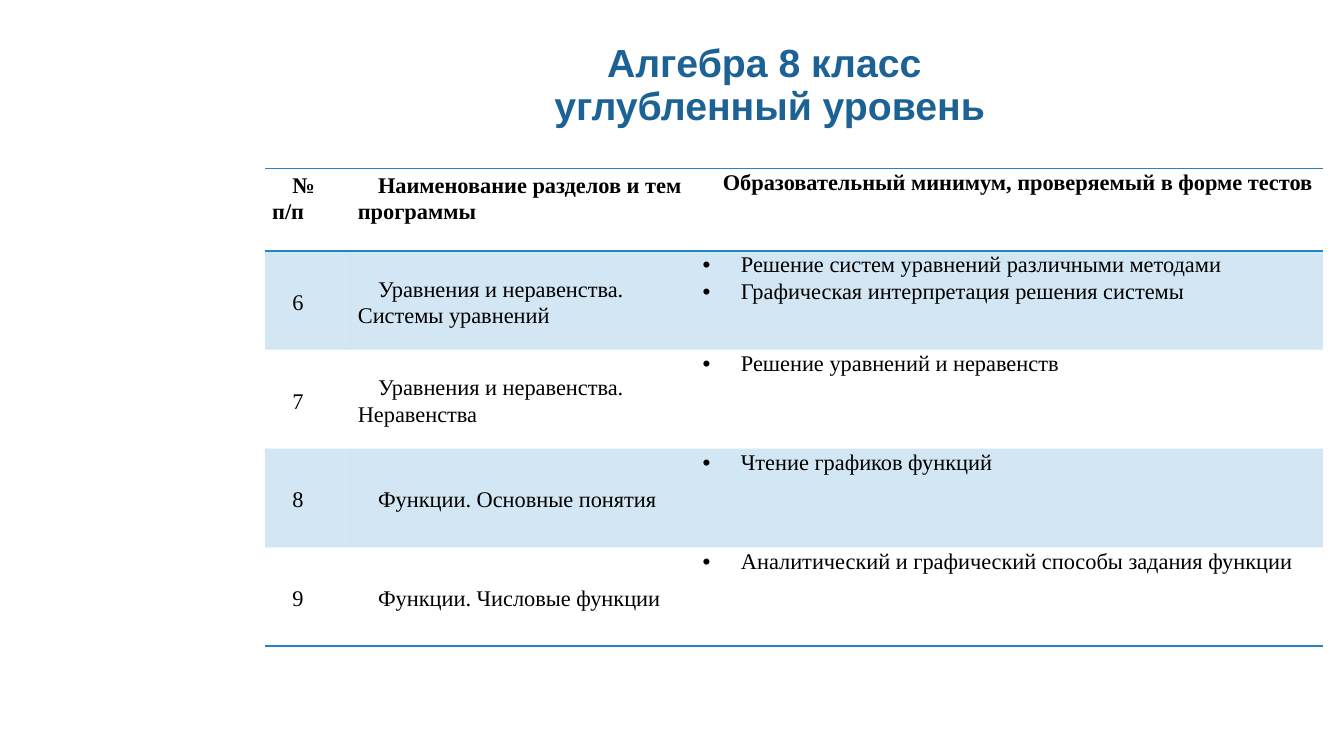
from dataclasses import dataclass

from lxml.etree import SubElement
from pptx import Presentation
from pptx.dml.color import RGBColor
from pptx.enum.text import MSO_ANCHOR as Anchor, PP_ALIGN as Align
from pptx.oxml.ns import qn
from pptx.table import _Cell as Cell
from pptx.text.text import _Paragraph as Paragraph
from pptx.util import Inches, Pt

COLORS = {"title": "1D6294", "accent": "2683C6", "text": "000000"}
NO_STYLE = "{2D5ABB26-0587-4C30-8999-92F81FD0307C}"
COLUMN_WIDTHS = (0.85, 3.42, 6.22)
HEADER_HEIGHT, TOPIC_HEIGHT = 0.82, 0.98
HEADINGS = (
    "№ п/п",
    "Наименование разделов и тем программы",
    "Образовательный минимум, проверяемый в форме тестов",
)


@dataclass(frozen=True)
class Topic:
    number: int
    name: str
    skills: tuple[str, ...]


TOPICS = (
    Topic(6, "Уравнения и неравенства. Системы уравнений",
          ("Решение систем уравнений различными методами",
           "Графическая интерпретация решения системы")),
    Topic(7, "Уравнения и неравенства. Неравенства",
          ("Решение уравнений и неравенств",)),
    Topic(8, "Функции. Основные понятия", ("Чтение графиков функций",)),
    Topic(9, "Функции. Числовые функции",
          ("Аналитический и графический способы задания функции",)),
)


def set_font(paragraph: Paragraph, name: str, size: int, color: str, bold: bool) -> None:
    for run in paragraph.runs:
        run.font.name = name
        run.font.size = Pt(size)
        run.font.bold = bold
        run.font.color.rgb = RGBColor.from_string(COLORS[color])


def set_indent(paragraph: Paragraph, left: float, first: float) -> None:
    properties = paragraph._p.get_or_add_pPr()
    properties.set("marL", str(Inches(left)))
    properties.set("indent", str(Inches(first)))


def add_bullet(paragraph: Paragraph) -> None:
    properties = paragraph._p.get_or_add_pPr()
    SubElement(properties, qn("a:buFont"), typeface="Arial")
    SubElement(properties, qn("a:buChar"), char="•")


def add_border(cell: Cell, side: str) -> None:
    """Rule one side of the cell: "T" for top, "B" for bottom."""
    line = SubElement(cell._tc.get_or_add_tcPr(), qn(f"a:ln{side}"), w=str(Pt(1)))
    fill = SubElement(line, qn("a:solidFill"))
    SubElement(fill, qn("a:srgbClr"), val=COLORS["accent"])


def shade(cell: Cell) -> None:
    """Tint the cell with the accent colour at 20 % opacity."""
    cell.fill.solid()
    cell.fill.fore_color.rgb = RGBColor.from_string(COLORS["accent"])
    color = cell._tc.tcPr.find(f"{qn('a:solidFill')}/{qn('a:srgbClr')}")
    SubElement(color, qn("a:alpha"), val="20000")


def fill_cell(cell: Cell, lines: tuple[str, ...], top: float, anchor: Anchor,
              bold: bool = False, bulleted: bool = False) -> None:
    cell.margin_left = cell.margin_right = Inches(0.07)
    cell.margin_top, cell.margin_bottom = Inches(top), 0
    cell.vertical_anchor = anchor
    cell.text_frame.text = "\n".join(lines)
    for paragraph in cell.text_frame.paragraphs:
        paragraph.line_spacing = 1.07
        if bulleted:
            set_indent(paragraph, 0.38, -0.38)
            add_bullet(paragraph)
        else:
            set_indent(paragraph, 0, 0.2)
        set_font(paragraph, "Times New Roman", 16, "text", bold)


def add_title(slide) -> None:
    frame = slide.shapes.add_textbox(
        Inches(2.63), Inches(0.36), Inches(9.9), Inches(0.99)).text_frame
    frame.word_wrap = True
    frame.vertical_anchor = Anchor.MIDDLE
    heading = frame.paragraphs[0]
    heading.text = "Алгебра 8 класс\v углубленный уровень"
    heading.alignment = Align.CENTER
    heading.line_spacing = 0.9
    set_font(heading, "Arial", 28, "title", True)


def add_program(slide) -> None:
    height = HEADER_HEIGHT + TOPIC_HEIGHT * len(TOPICS)
    program = slide.shapes.add_table(
        len(TOPICS) + 1, len(COLUMN_WIDTHS), Inches(2.63), Inches(1.67),
        Inches(sum(COLUMN_WIDTHS)), Inches(height)).table
    program._tbl.tblPr.find(qn("a:tableStyleId")).text = NO_STYLE
    for column, width in zip(program.columns, COLUMN_WIDTHS):
        column.width = Inches(width)
    for index, row in enumerate(program.rows):
        row.height = Inches(TOPIC_HEIGHT if index else HEADER_HEIGHT)

    for column, heading in enumerate(HEADINGS):
        cell = program.cell(0, column)
        fill_cell(cell, (heading,), 0 if column == 2 else 0.03, Anchor.TOP, bold=True)
        add_border(cell, "T")
        add_border(cell, "B")
        add_border(program.cell(len(TOPICS), column), "B")

    for row, topic in enumerate(TOPICS, start=1):
        number, name, skills = (program.cell(row, column) for column in range(3))
        fill_cell(number, (str(topic.number),), 0.03, Anchor.MIDDLE)
        fill_cell(name, (topic.name,), 0.03, Anchor.MIDDLE)
        fill_cell(skills, topic.skills, 0, Anchor.TOP, bulleted=True)
        for cell in (number, name, skills):
            if row % 2:
                shade(cell)
            else:
                cell.fill.background()


def main() -> None:
    deck = Presentation()
    deck.slide_width, deck.slide_height = Inches(13.33), Inches(7.5)
    slide = deck.slides.add_slide(deck.slide_layouts[6])
    add_title(slide)
    add_program(slide)
    deck.save("out.pptx")


if __name__ == "__main__":
    main()
